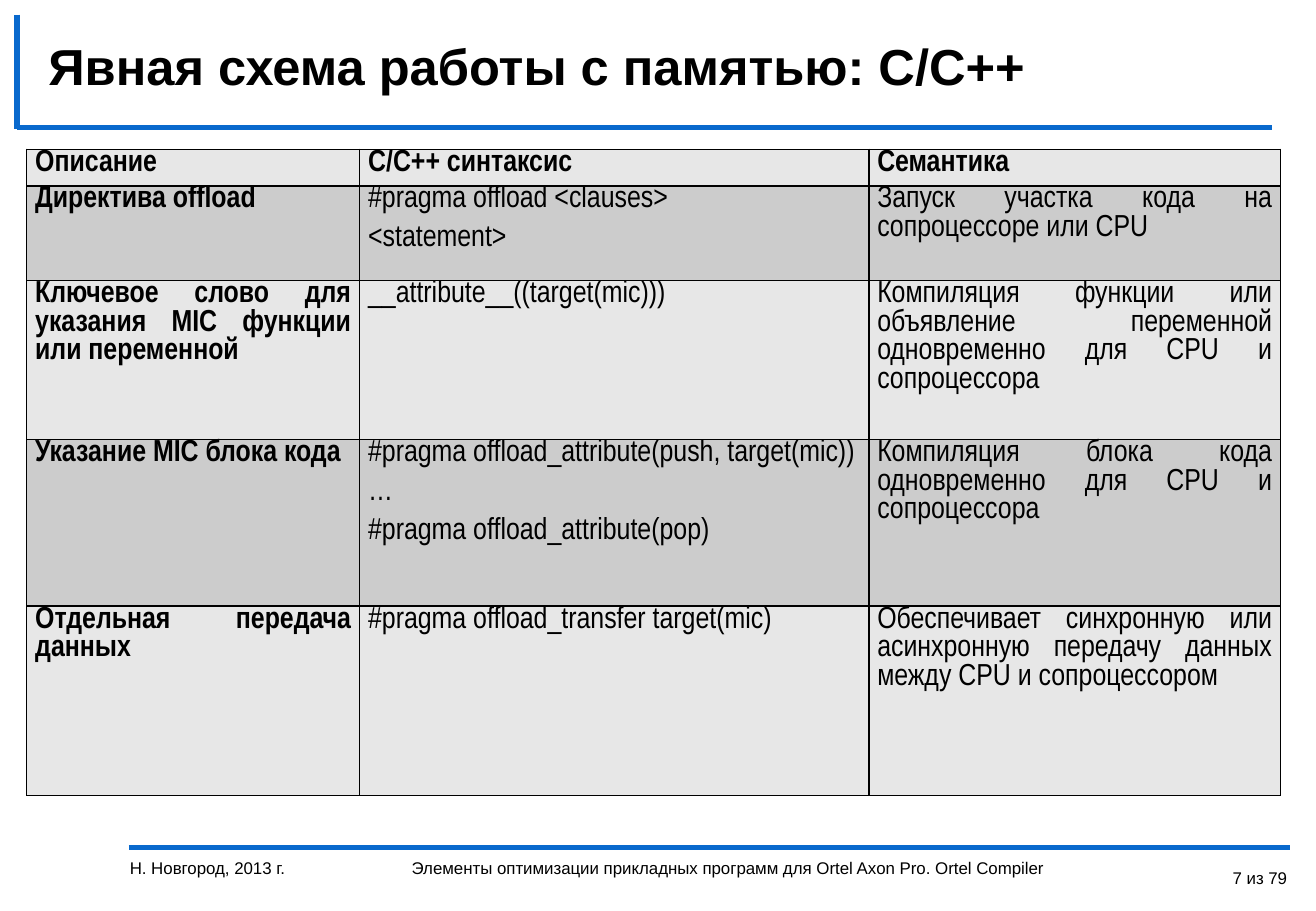
import pptx
import pptx.dml.color
import pptx.enum.shapes
import pptx.enum.text
import pptx.oxml
import pptx.oxml.ns
import pptx.util
from lxml import etree

Inches = pptx.util.Inches
Align = pptx.enum.text.PP_ALIGN
Anchor = pptx.enum.text.MSO_ANCHOR

COLORS = {"text": "000000", "rule": "0969CD", "light": "E7E7E7", "dark": "CCCCCC"}
RULES = [(1.06, 6.98, 10.62, 6.98), (0.14, 1.05, 10.47, 1.05), (0.14, 0.12, 0.14, 1.06)]
COLUMN_WIDTHS = [2.74, 4.19, 3.39]
ROW_HEIGHTS = [0.3, 0.78, 1.31, 1.37, 1.56]
ROWS = [
    ("Описание", "C/C++ синтаксис", "Семантика"),
    ("Директива offload", "#pragma offload <clauses>\n<statement>",
     "Запуск участка кода на сопроцессоре или CPU"),
    ("Ключевое слово для указания MIC функции или переменной",
     "__attribute__((target(mic)))",
     "Компиляция функции или объявление переменной одновременно для CPU и сопроцессора"),
    ("Указание MIC блока кода",
     "#pragma offload_attribute(push, target(mic))\n…\n#pragma offload_attribute(pop)",
     "Компиляция блока кода одновременно для CPU и сопроцессора"),
    ("Отдельная передача данных", "#pragma offload_transfer target(mic)",
     "Обеспечивает синхронную или асинхронную передачу данных между CPU и сопроцессором"),
]


def rgb(name):
    """Return the palette colour of that name."""
    return pptx.dml.color.RGBColor.from_string(COLORS[name])


def write_text(frame, text, font="Arial", size=10, bold=False, align=Align.LEFT,
               space_after=0, line_spacing=None):
    """Fill a text frame with one paragraph per line of text."""
    frame.word_wrap = True
    for index, line in enumerate(text.split("\n")):
        paragraph = frame.add_paragraph() if index else frame.paragraphs[0]
        paragraph.alignment = align
        paragraph.space_after = pptx.util.Pt(space_after)
        if line_spacing:
            paragraph.line_spacing = line_spacing
        run = paragraph.add_run()
        run.text = line
        run.font.name = font
        run.font.size = pptx.util.Pt(size)
        run.font.bold = bold
        run.font.color.rgb = rgb("text")


class SlideBuilder:
    """Holds the current slide and draws its elements in one style."""

    def __init__(self, slide):
        """Keep the slide to draw on."""
        self.slide = slide

    def rule(self, left, top, right, bottom):
        """Draw a blue line."""
        connector = self.slide.shapes.add_connector(
            pptx.enum.shapes.MSO_CONNECTOR.STRAIGHT,
            Inches(left), Inches(top), Inches(right), Inches(bottom))
        connector.line.color.rgb = rgb("rule")
        connector.line.width = pptx.util.Pt(3)
        properties = connector._element.spPr
        etree.SubElement(properties, pptx.oxml.ns.qn("a:effectLst"))

    def text(self, left, top, width, height, text, anchor=Anchor.TOP, **style):
        """Place a text box."""
        box = self.slide.shapes.add_textbox(
            Inches(left), Inches(top), Inches(width), Inches(height))
        box.text_frame.vertical_anchor = anchor
        write_text(box.text_frame, text, **style)

    def border(self, cell):
        """Give a cell thin black borders on every side."""
        properties = cell._tc.get_or_add_tcPr()
        namespace = pptx.oxml.ns.nsdecls("a")
        for index, side in enumerate(("lnL", "lnR", "lnT", "lnB")):
            properties.insert(index, pptx.oxml.parse_xml(
                f'<a:{side} {namespace} w="12700"><a:solidFill>'
                f'<a:srgbClr val="{COLORS["text"]}"/></a:solidFill></a:{side}>'))

    def table(self, left, top, rows, widths, heights):
        """Place a table with alternating row fills and a bold head row and column."""
        table = self.slide.shapes.add_table(
            len(rows), len(widths), Inches(left), Inches(top),
            Inches(sum(widths)), Inches(sum(heights))).table
        for column, width in zip(table.columns, widths):
            column.width = Inches(width)
        for row_index, (row, height) in enumerate(zip(rows, heights)):
            table.rows[row_index].height = Inches(height)
            for column_index, text in enumerate(row):
                cell = table.cell(row_index, column_index)
                cell.margin_left = cell.margin_right = Inches(0.07)
                cell.margin_top = cell.margin_bottom = 0
                cell.fill.solid()
                cell.fill.fore_color.rgb = rgb("dark" if row_index % 2 else "light")
                self.border(cell)
                is_directive = (row_index, column_index) == (1, 1)
                write_text(cell.text_frame, text, font="Arial Narrow", size=18,
                           bold=row_index == 0 or column_index == 0, space_after=6,
                           align=Align.LEFT if is_directive else Align.JUSTIFY)


def main():
    """Build and save the slide."""
    presentation = pptx.Presentation()
    presentation.slide_width = Inches(10.83)
    presentation.slide_height = Inches(7.5)
    builder = SlideBuilder(presentation.slides.add_slide(presentation.slide_layouts[6]))
    for ends in RULES:
        builder.rule(*ends)
    builder.text(0.3, 0.23, 9.93, 0.61, "Явная схема работы с памятью: С/C++",
                 anchor=Anchor.MIDDLE, size=30, bold=True)
    builder.table(0.22, 1.23, ROWS, COLUMN_WIDTHS, ROW_HEIGHTS)
    builder.text(0.97, 7.01, 2.24, 0.49, "Н. Новгород, 2013 г.")
    builder.text(3.29, 7.01, 6.3, 0.49,
                 "Элементы оптимизации прикладных программ для Ortel Axon Pro. Ortel Compiler")
    builder.text(9.67, 7.01, 1.02, 0.49, "7 из 79", align=Align.RIGHT, line_spacing=1.5)
    presentation.save("out.pptx")


if __name__ == "__main__":
    main()
